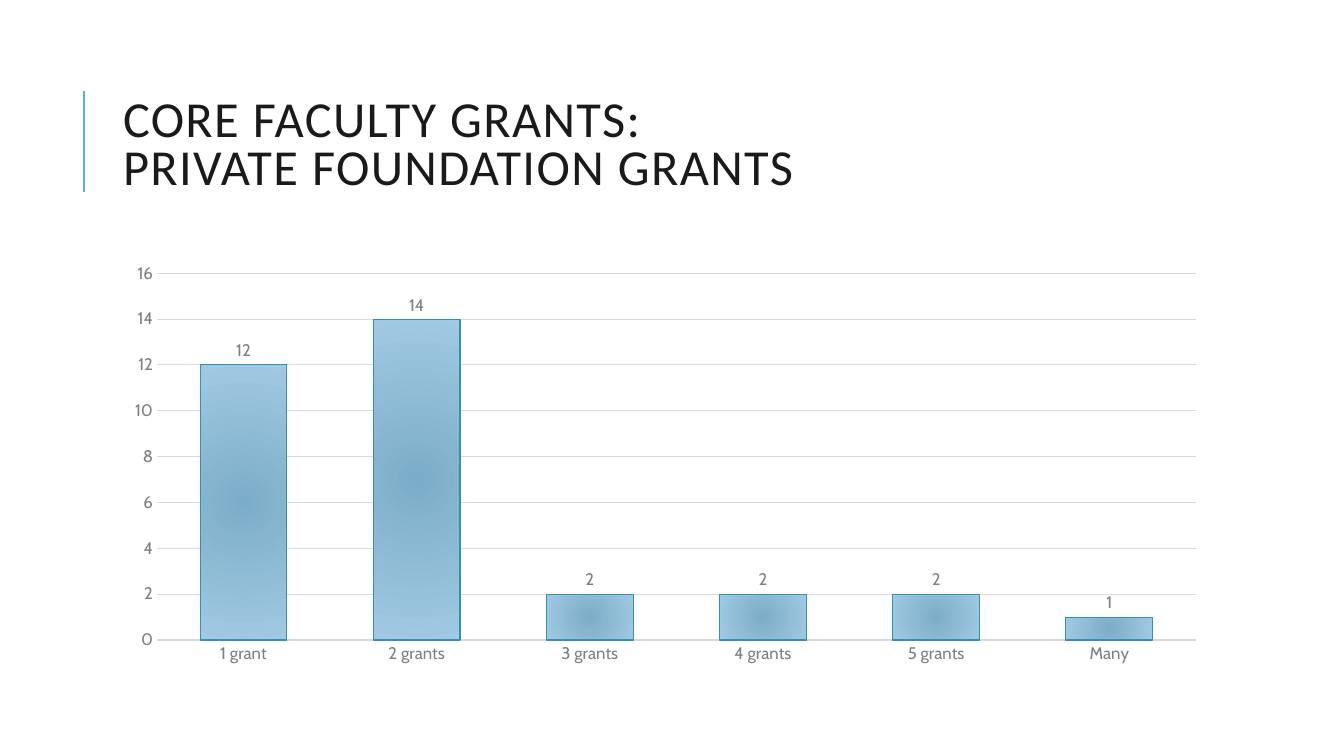
from dataclasses import dataclass

from lxml import etree
from pptx import Presentation
from pptx import util as u
from pptx.chart import data
from pptx.dml import color
from pptx.enum import chart as kinds, shapes, text
from pptx.oxml import ns, parse_xml


@dataclass(frozen=True)
class Theme:
    ink: str = "1A1A1A"
    gray: str = "808080"
    grid: str = "D9D9D9"
    teal: str = "58B6C0"
    edge: str = "3391B6"
    core: str = "7CADC8"
    rim: str = "A1C9E3"
    head: str = "Calibri"
    body: str = "Cabin"
    big: int = 36
    small: int = 12


THEME = Theme()


def rgb(code):
    return color.RGBColor.from_string(code)


def style(font, name, size, code):
    font.name = name
    font.size = u.Pt(size)
    font.color.rgb = rgb(code)


def rule(line, code, width):
    line.color.rgb = rgb(code)
    line.width = u.Pt(width)


def add_title(slide, box, words):
    left, top, width, height = box
    title = slide.shapes.title
    title.left, title.top, title.width, title.height = map(u.Inches, box)
    frame = title.text_frame
    frame.word_wrap = True
    frame.auto_size = text.MSO_AUTO_SIZE.NONE
    frame.vertical_anchor = text.MSO_ANCHOR.MIDDLE
    para = frame.paragraphs[0]
    para.text = words
    para.alignment = text.PP_ALIGN.LEFT
    para.line_spacing = 0.8
    style(para.font, THEME.head, THEME.big, THEME.ink)
    para._p.pPr.find(ns.qn("a:defRPr")).set("spc", "100")

    x = u.Inches(left - 0.29)
    bar = slide.shapes.add_connector(
        shapes.MSO_CONNECTOR.STRAIGHT,
        x, u.Inches(top + 1.26), x, u.Inches(top + 0.26))
    rule(bar.line, THEME.teal, 1.5)
    etree.SubElement(bar._element.spPr, ns.qn("a:effectLst"))


def glow(fill):
    fill.gradient()
    grad = fill._xPr.find(ns.qn("a:gradFill"))
    fresh = parse_xml(
        f'<a:gradFill {ns.nsdecls("a")}><a:gsLst>'
        f'<a:gs pos="0"><a:srgbClr val="{THEME.core}"/></a:gs>'
        f'<a:gs pos="100000"><a:srgbClr val="{THEME.rim}"/></a:gs>'
        '</a:gsLst><a:path path="circle"><a:fillToRect l="100000" '
        't="100000" r="100000" b="100000"/></a:path></a:gradFill>')
    grad.getparent().replace(grad, fresh)


def add_bars(slide, box, cats, vals):
    table = data.CategoryChartData()
    table.categories = cats
    table.add_series("Series 1", vals)
    chart = slide.shapes.add_chart(
        kinds.XL_CHART_TYPE.COLUMN_CLUSTERED,
        *map(u.Inches, box), table).chart
    chart.has_title = False
    chart.has_legend = False
    style(chart.font, THEME.body, THEME.small, THEME.gray)

    for axis in (chart.category_axis, chart.value_axis):
        axis.major_tick_mark = kinds.XL_TICK_MARK.NONE
        axis.minor_tick_mark = kinds.XL_TICK_MARK.NONE
        style(axis.tick_labels.font, THEME.body, THEME.small, THEME.gray)
    rule(chart.category_axis.format.line, THEME.grid, 0.75)
    scale = chart.value_axis
    scale.minimum_scale, scale.maximum_scale, scale.major_unit = 0, 16, 2
    scale.format.line.fill.background()
    rule(scale.major_gridlines.format.line, THEME.grid, 0.75)

    plot = chart.plots[0]
    plot.gap_width = 100
    plot.overlap = -24
    plot.vary_by_categories = False
    bars = plot.series[0]
    glow(bars.format.fill)
    rule(bars.format.line, THEME.edge, 0.75)
    tags = bars.data_labels
    tags.show_value = True
    tags.position = kinds.XL_LABEL_POSITION.OUTSIDE_END
    style(tags.font, THEME.body, THEME.small, THEME.gray)


def main():
    deck = Presentation()
    deck.slide_width = u.Inches(13.33)
    deck.slide_height = u.Inches(7.5)
    slide = deck.slides.add_slide(deck.slide_layouts.get_by_name("Title Only"))
    add_title(slide, (1.12, 0.64, 10.63, 1.64),
              "CORE FACULTY GRANTS:\vPRIVATE FOUNDATION GRANTS")
    add_bars(slide, (1.12, 2.53, 10.96, 4.14),
             ("1 grant", "2 grants", "3 grants", "4 grants", "5 grants", "Many"),
             (12, 14, 2, 2, 2, 1))
    deck.save("out.pptx")


if __name__ == "__main__":
    main()
